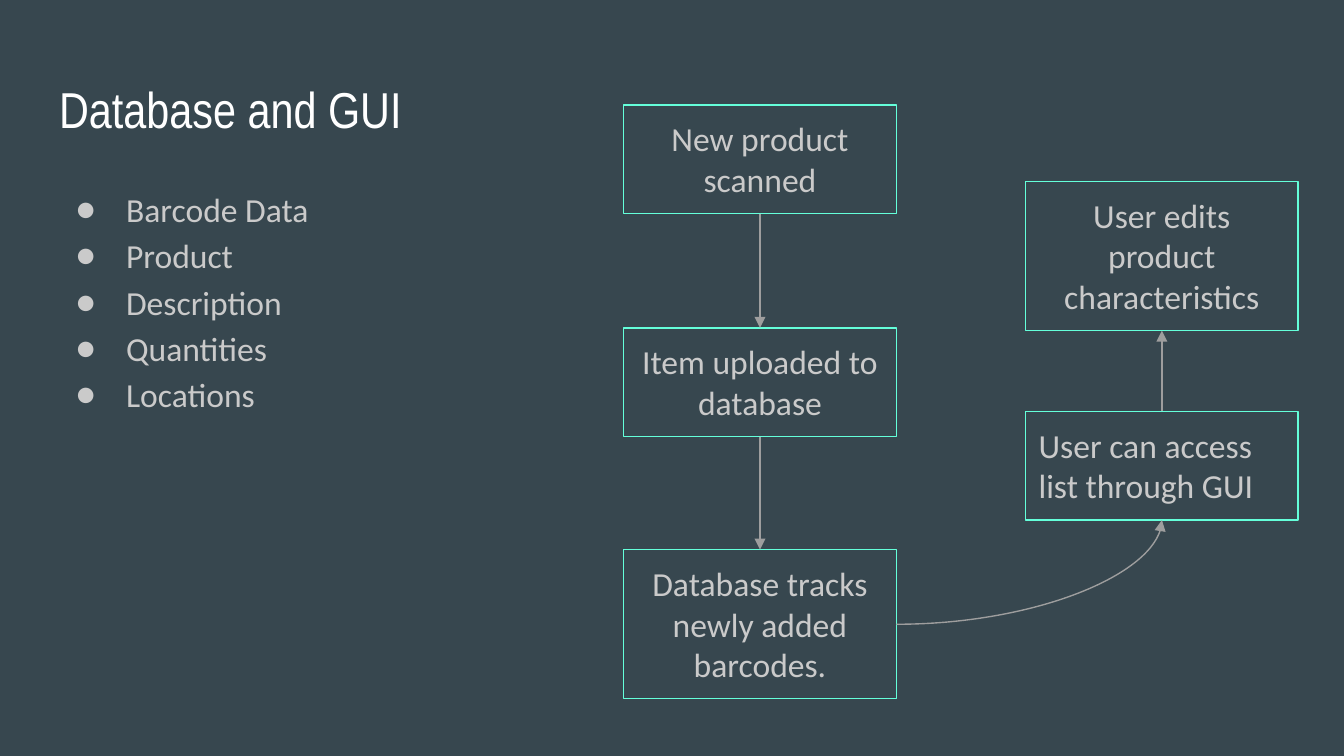
from lxml import etree
from pptx import Presentation
from pptx import util as u
from pptx.dml.color import RGBColor
from pptx.enum import shapes, text
from pptx.oxml.ns import qn

COLORS = {"background": "37474F", "title": "FFFFFF", "text": "CACACA",
          "border": "64FFDA", "arrow": "9E9E9E"}
TITLE = "Database and GUI"
FIELDS = ["Barcode Data", "Product", "Description", "Quantities", "Locations"]
CENTER, LEFT = text.PP_ALIGN.CENTER, text.PP_ALIGN.LEFT
COLUMNS = {"system": 4.64, "user": 7.63}
BOX_WIDTH = 2.03
BOX_HEIGHTS = {2: 0.81, 3: 1.11}
STEPS = {
    "scan": ("New product scanned", "system", 0.78, 2, CENTER),
    "upload": ("Item uploaded to database", "system", 2.44, 2, CENTER),
    "track": ("Database tracks newly added barcodes.", "system", 4.09, 3, CENTER),
    "access": ("User can access list through GUI", "user", 3.06, 2, LEFT),
    "edit": ("User edits product characteristics", "user", 1.35, 3, CENTER),
}
TOP, BOTTOM, RIGHT = 0, 2, 3
ARROWS = [("scan", BOTTOM, "upload", TOP), ("upload", BOTTOM, "track", TOP),
          ("track", RIGHT, "access", BOTTOM), ("access", TOP, "edit", BOTTOM)]


def color(name):
    return RGBColor.from_string(COLORS[name])


def set_frame(frame, anchor):
    frame.word_wrap = True
    frame.vertical_anchor = anchor
    frame.margin_left = frame.margin_right = u.Inches(0.1)
    frame.margin_top = frame.margin_bottom = u.Inches(0.1)


def format_runs(paragraph, size, font, color_name):
    for run in paragraph.runs:
        run.font.size = u.Pt(size)
        run.font.name = font
        run.font.color.rgb = color(color_name)


def add_title(slide):
    title = slide.shapes.title
    title.left, title.top = u.Inches(0.34), u.Inches(0.49)
    title.width, title.height = u.Inches(9.32), u.Inches(0.63)
    frame = title.text_frame
    frame.text = TITLE
    set_frame(frame, text.MSO_ANCHOR.MIDDLE)
    frame.auto_size = text.MSO_AUTO_SIZE.NONE
    frame.paragraphs[0].alignment = LEFT
    format_runs(frame.paragraphs[0], 27, "Arial Narrow", "title")


def add_bullet(paragraph):
    properties = paragraph._p.get_or_add_pPr()
    properties.set("marL", str(u.Pt(36)))
    properties.set("indent", str(u.Pt(-27)))
    bullet_color = etree.SubElement(properties, qn("a:buClr"))
    etree.SubElement(bullet_color, qn("a:srgbClr"), val=COLORS["text"])
    etree.SubElement(properties, qn("a:buFont"), typeface="Calibri")
    etree.SubElement(properties, qn("a:buChar"), char="●")


def add_fields(slide):
    box = slide.shapes.add_textbox(u.Inches(0.34), u.Inches(1.26),
                                   u.Inches(4.66), u.Inches(3.74))
    frame = box.text_frame
    set_frame(frame, text.MSO_ANCHOR.TOP)
    frame.text = "\n".join(FIELDS)
    for paragraph in frame.paragraphs:
        paragraph.line_spacing = 1.15
        add_bullet(paragraph)
        format_runs(paragraph, 18, "Calibri", "text")


def add_step(slide, label, column, top, lines, alignment):
    box = slide.shapes.add_shape(
        shapes.MSO_SHAPE.RECTANGLE, u.Inches(COLUMNS[column]), u.Inches(top),
        u.Inches(BOX_WIDTH), u.Inches(BOX_HEIGHTS[lines]))
    box.shadow.inherit = False
    box.fill.background()
    box.line.color.rgb = color("border")
    box.line.width = u.Pt(0.75)
    frame = box.text_frame
    frame.text = label
    set_frame(frame, text.MSO_ANCHOR.TOP)
    frame.auto_size = text.MSO_AUTO_SIZE.SHAPE_TO_FIT_TEXT
    frame.paragraphs[0].alignment = alignment
    format_runs(frame.paragraphs[0], 18, "Calibri", "text")
    return box


def add_arrow(slide, start, start_side, end, end_side):
    curved = start_side == RIGHT
    kind = shapes.MSO_CONNECTOR.CURVE if curved else shapes.MSO_CONNECTOR.STRAIGHT
    arrow = slide.shapes.add_connector(kind, 0, 0, 0, 0)
    arrow.begin_connect(start, start_side)
    arrow.end_connect(end, end_side)
    arrow.line.color.rgb = color("arrow")
    arrow.line.width = u.Pt(0.75)
    properties = arrow._element.spPr
    if curved:
        properties.find(qn("a:prstGeom")).set("prst", "curvedConnector2")
    etree.SubElement(properties.find(qn("a:ln")), qn("a:tailEnd"), type="triangle")
    etree.SubElement(properties, qn("a:effectLst"))


def main():
    presentation = Presentation()
    presentation.slide_width = u.Inches(10)
    presentation.slide_height = u.Inches(10 * 9 / 16)
    slide = presentation.slides.add_slide(presentation.slide_layouts[5])
    slide.background.fill.solid()
    slide.background.fill.fore_color.rgb = color("background")
    add_title(slide)
    add_fields(slide)
    boxes = {name: add_step(slide, *step) for name, step in STEPS.items()}
    for start, start_side, end, end_side in ARROWS:
        add_arrow(slide, boxes[start], start_side, boxes[end], end_side)
    presentation.save("out.pptx")


if __name__ == "__main__":
    main()
